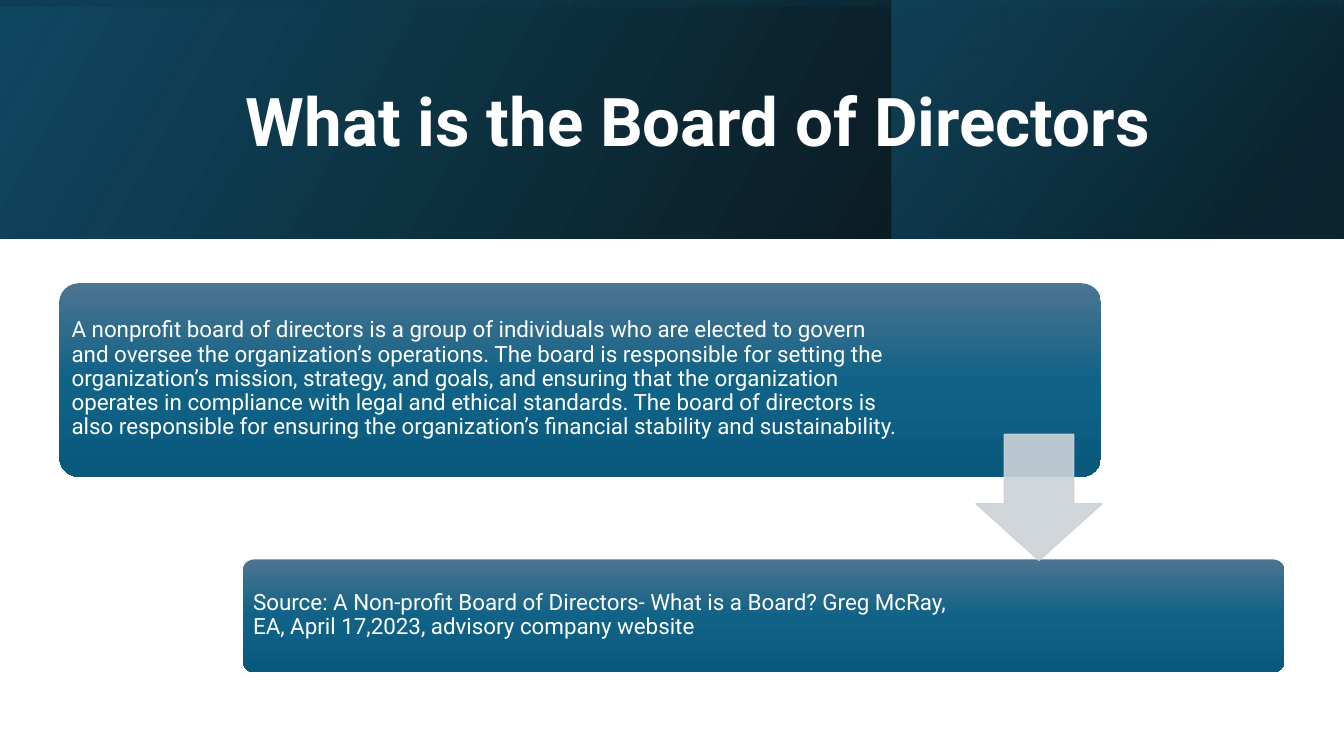
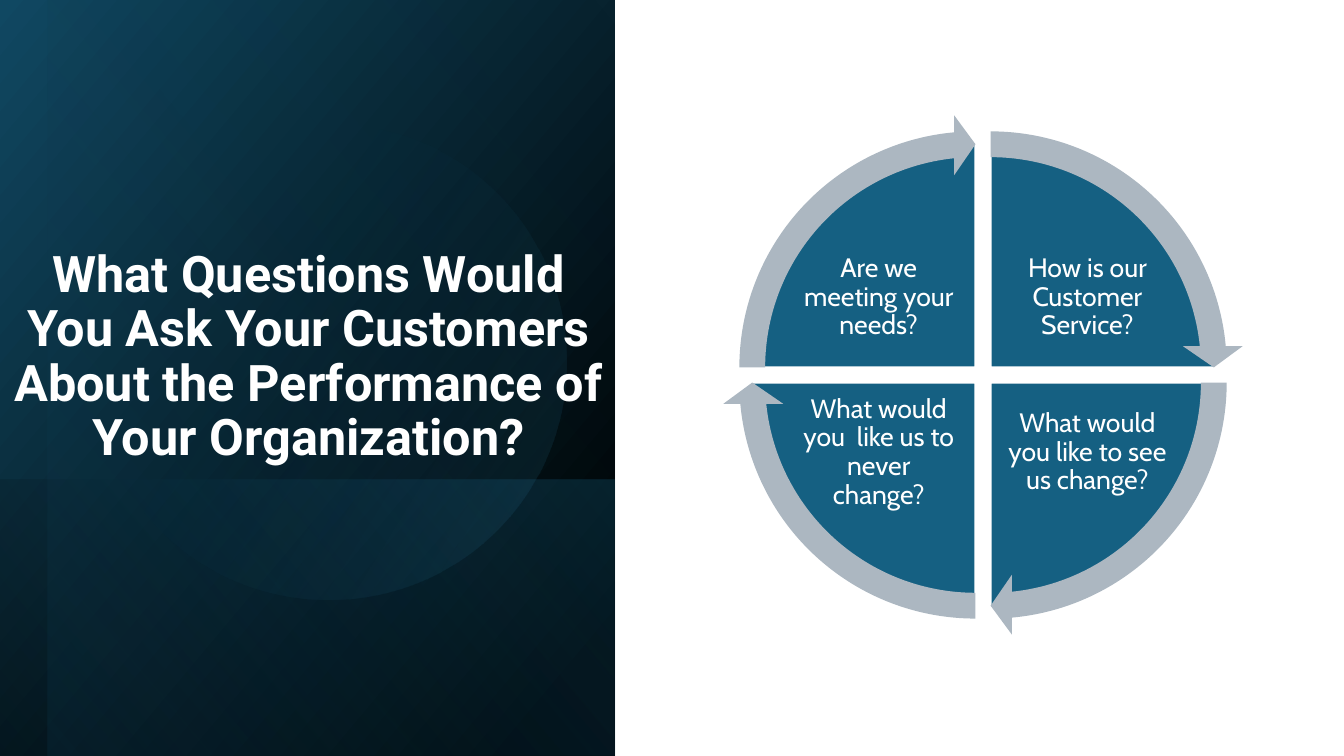
import pptx
import pptx.dml.color
import pptx.enum.shapes
import pptx.enum.text
import pptx.oxml.ns
import pptx.util
from lxml import etree

Inches = pptx.util.Inches
qn = pptx.oxml.ns.qn
KIND = pptx.enum.shapes.MSO_SHAPE
ALIGN = pptx.enum.text.PP_ALIGN
ANCHOR = pptx.enum.text.MSO_ANCHOR

# Shared look
WHITE, BLACK = "FFFFFF", "000000"
NAVY, TEAL, SKY = "104862", "156082", "46B1E1"
PALE, GREY = "CCD2D8", "ACB7C1"
TITLE = dict(font="Roboto", bold=True, align=ALIGN.CENTER)
BOX = dict(stops=[(0, "4C7591"), (50, "106287"), (100, "09597D")], angle=90)

# Content: panels are (kind, place, rotation, flipped, stops, angle),
# and a stop is (position, colour, opacity)
BOARD = dict(
    title="What is the Board of Directors",
    panels=[
        (KIND.RECTANGLE, (0, 0, 13.33, 2.37), 0, True,
         [(0, BLACK, 96), (100, NAVY)], 330),
        (KIND.RECTANGLE, (8.84, 0, 4.48, 2.37), 0, True,
         [(19, "0B3041", 68), (100, TEAL, 48)], 320),
        (KIND.RECTANGLE, (5.48, -5.48, 2.37, 13.33), 270, True,
         [(23, NAVY, 16), (99, BLACK, 45)], 350),
    ],
    # (box place, text place, text)
    steps=[
        ((0.59, 2.81, 10.33, 1.92), (0.64, 2.86, 8.35, 1.8),
         "A nonprofit board of directors is a group of individuals who are "
         "elected to govern and oversee the organization’s operations. The "
         "board is responsible for setting the organization’s mission, "
         "strategy, and goals, and ensuring that the organization operates in "
         "compliance with legal and ethical standards. The board of directors "
         "is also responsible for ensuring the organization’s financial "
         "stability and sustainability."),
        ((2.41, 5.55, 10.33, 1.12), (2.44, 5.58, 7.2, 1.05),
         "Source: A Non-profit Board of Directors- What is a Board? Greg "
         "McRay, EA, April 17,2023, advisory company website"),
    ],
)
ASK = dict(
    title="What Questions Would You Ask Your Customers About the Performance "
          "of Your Organization?",
    panels=[
        (KIND.RECTANGLE, (-0.7, 0.7, 7.5, 6.1), 90, True,
         [(8, BLACK), (100, NAVY)], 50),
        (KIND.RECTANGLE, (1.67, 3.08, 2.74, 6.1), 90, True,
         [(2, TEAL, 29), (100, BLACK, 30)], 130),
        (KIND.RECTANGLE, (-0.46, 0.93, 7.5, 5.63), 90, True,
         [(0, BLACK, 0), (99, TEAL, 11)], 130),
        (KIND.OVAL, (0.9, 1.23, 4.72, 4.72), 101.6, False,
         [(39, TEAL, 0), (100, SKY, 15)], 290),
    ],
    # Clockwise from top right: (side across, side down, text)
    parts=[
        (1, -1, "How is our Customer Service?"),
        (1, 1, "What would you like to see us change?"),
        (-1, 1, "What would you  like us to never change?"),
        (-1, -1, "Are we meeting your needs?"),
    ],
)


def rgb(code):
    return pptx.dml.color.RGBColor.from_string(code)


def place(at):
    return [Inches(n) for n in at]


def fade(node, alpha):
    """Set the opacity, in percent, of a colour element."""
    etree.SubElement(node, qn("a:alpha")).set("val", str(alpha * 1000))


def shape(slide, kind, at, fill=None, line=None, width=1, adj=()):
    item = slide.shapes.add_shape(kind, *place(at))
    item.shadow.inherit = False
    for i, value in enumerate(adj):
        item.adjustments[i] = value
    if fill:
        item.fill.solid()
        item.fill.fore_color.rgb = rgb(fill)
    if line:
        item.line.color.rgb = rgb(line)
        item.line.width = pptx.util.Pt(width)
    else:
        item.line.fill.background()
    return item


def blend(item, stops, angle):
    """Fill with a gradient; the angle runs clockwise."""
    item.fill.gradient()
    item.fill.gradient_angle = 360 - angle
    row = item.element.spPr.find(".//" + qn("a:gsLst"))
    for old in list(row):
        row.remove(old)
    for pos, code, *alpha in stops:
        stop = etree.SubElement(row, qn("a:gs"))
        stop.set("pos", str(pos * 1000))
        node = etree.SubElement(stop, qn("a:srgbClr"))
        node.set("val", code)
        if alpha:
            fade(node, alpha[0])


def write(slide, text, at, size, font="Roboto", bold=False, align=ALIGN.LEFT,
          anchor=ANCHOR.MIDDLE, inset=None):
    frame = slide.shapes.add_textbox(*place(at)).text_frame
    frame.word_wrap = True
    frame.vertical_anchor = anchor
    if inset is not None:
        frame.margin_left = frame.margin_right = Inches(inset)
        frame.margin_top = frame.margin_bottom = Inches(inset)
    para = frame.paragraphs[0]
    para.alignment = align
    para.line_spacing = 0.9
    run = para.add_run()
    run.text = text
    run.font.name = font
    run.font.size = pptx.util.Pt(size)
    run.font.bold = bold
    run.font.color.rgb = rgb(WHITE)


def start(deck, data, at, size, **style):
    """Add a slide with its gradient panels and title."""
    slide = deck.slides.add_slide(deck.slide_layouts[6])
    for kind, spot, turn, flip, stops, angle in data["panels"]:
        item = shape(slide, kind, spot)
        item.rotation = turn
        if flip:
            item.element.spPr.xfrm.set("flipH", "1")
        blend(item, stops, angle)
    write(slide, data["title"], at, size, **TITLE, **style)
    return slide


def steps(slide, data):
    for box, spot, text in data["steps"]:
        item = shape(slide, KIND.ROUNDED_RECTANGLE, box, adj=[0.1])
        blend(item, **BOX)
        write(slide, text, spot, 16, inset=0.07)
    arrow = shape(slide, KIND.DOWN_ARROW, (9.68, 4.31, 1.25, 1.25),
                  fill=PALE, line=PALE, adj=[0.55, 0.45])
    for node in arrow.element.spPr.iter(qn("a:srgbClr")):
        fade(node, 90)


def wheel(slide, data):
    mid_x, mid_y, gap = 9.75, 3.72, 0.075
    pie, ring = 4.47, 5.02
    wide, high = 1.65, 1.22
    turn, quarter = 216, 54  # angle units of the adjustments
    rings = []
    for i, (across, down, text) in enumerate(data["parts"]):
        x, y = mid_x + across * gap, mid_y + down * gap
        first = (162 + i * quarter) % turn
        shape(slide, KIND.PIE, (x - pie / 2, y - pie / 2, pie, pie),
              fill=TEAL, line=WHITE, width=1.5,
              adj=[first, (first + quarter) % turn])
        spot = (mid_x + across * 1.035 - wide / 2,
                mid_y + down * 0.77 - high / 2, wide, high)
        write(slide, text, spot, 19, font="Cabin", align=ALIGN.CENTER,
              inset=0.03)
        rings.append((x - ring / 2, y - ring / 2, first))
    # Arrows lie over all the quarters
    for left, top, first in rings:
        shape(slide, KIND.CIRCULAR_ARROW, (left, top, ring, ring), fill=GREY,
              adj=[0.051, 3.275, first + 50.725, first, 0.059])


def main():
    deck = pptx.Presentation()
    deck.slide_width, deck.slide_height = Inches(13.33), Inches(7.5)
    steps(start(deck, BOARD, (1.51, 0.38, 10.83, 1.72), 48), BOARD)
    wheel(start(deck, ASK, (0.01, 1.77, 6.1, 2.91), 36,
                anchor=ANCHOR.BOTTOM), ASK)
    deck.save("out.pptx")


if __name__ == "__main__":
    main()
